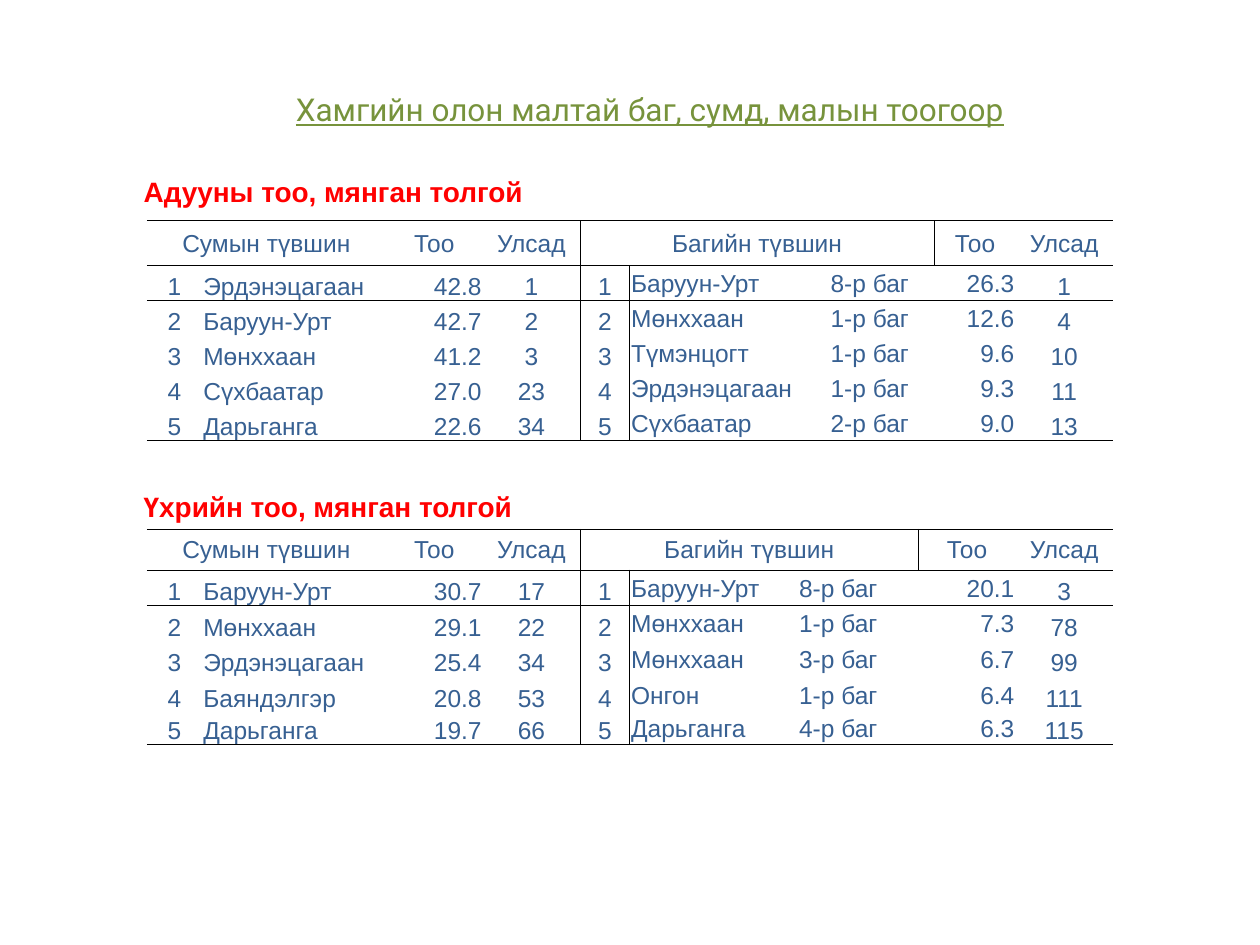
from lxml.etree import SubElement
from pptx import Presentation
from pptx.dml.color import RGBColor
from pptx.enum.text import MSO_ANCHOR, MSO_AUTO_SIZE, PP_ALIGN
from pptx.oxml.ns import qn
from pptx.util import Inches, Pt

UNIT = Inches(1 / 12)  # the slide is a grid of 120 columns by 90 rows
NO_STYLE_NO_GRID = "{2D5ABB26-0587-4C30-8999-92F81FD0307C}"
LEFT, CENTER, RIGHT = PP_ALIGN.LEFT, PP_ALIGN.CENTER, PP_ALIGN.RIGHT
MIDDLE, BOTTOM = MSO_ANCHOR.MIDDLE, MSO_ANCHOR.BOTTOM

HEADERS = {0: "Сумын түвшин", 2: "Тоо", 3: "Улсад", 4: "Багийн түвшин", 7: "Тоо", 8: "Улсад"}
HEADER_SPANS = {0: 1, 4: 6}  # first column: last column
COLUMN_ALIGNMENTS = [CENTER, LEFT, RIGHT, CENTER, CENTER, LEFT, LEFT, RIGHT, CENTER]
COLUMN_ANCHORS = [BOTTOM] * 5 + [MIDDLE] * 3 + [BOTTOM]
DISTRICT_WIDTHS = [5.25, 17.5, 9.25, 9.25, 4.75]
FIRST_BAG_COLUMN = len(DISTRICT_WIDTHS) - 1

# district, count, national rank | district, bag, count, national rank
HORSES = [
    ("Эрдэнэцагаан", "42.8", "1", "Баруун-Урт", "8-р баг", "26.3", "1"),
    ("Баруун-Урт", "42.7", "2", "Мөнххаан", "1-р баг", "12.6", "4"),
    ("Мөнххаан", "41.2", "3", "Түмэнцогт", "1-р баг", "9.6", "10"),
    ("Сүхбаатар", "27.0", "23", "Эрдэнэцагаан", "1-р баг", "9.3", "11"),
    ("Дарьганга", "22.6", "34", "Сүхбаатар", "2-р баг", "9.0", "13"),
]
CATTLE = [
    ("Баруун-Урт", "30.7", "17", "Баруун-Урт", "8-р баг", "20.1", "3"),
    ("Мөнххаан", "29.1", "22", "Мөнххаан", "1-р баг", "7.3", "78"),
    ("Эрдэнэцагаан", "25.4", "34", "Мөнххаан", "3-р баг", "6.7", "99"),
    ("Баяндэлгэр", "20.8", "53", "Онгон", "1-р баг", "6.4", "111"),
    ("Дарьганга", "19.7", "66", "Дарьганга", "4-р баг", "6.3", "115"),
]


def color(hex_string):
    return RGBColor.from_string(hex_string)


def units(count):
    return round(count * UNIT)


def write(frame, text, *, size, fill, font="Arial", bold=False, underline=False, align=LEFT):
    paragraph = frame.paragraphs[0]
    paragraph.alignment = align
    run = paragraph.add_run()
    run.text = text
    run.font.name = font
    run.font.size = Pt(size)
    run.font.bold = bold
    run.font.underline = underline
    run.font.color.rgb = color(fill)


def draw_borders(cell, sides, line="000000", width=0.5):
    """Rule the named sides (any of L, R, T, B); they must precede the cell's fill."""
    properties = cell._tc.get_or_add_tcPr()
    for side in "LRTB":
        if side in sides:
            border = SubElement(properties, qn(f"a:ln{side}"), w=str(Pt(width)))
            solid = SubElement(border, qn("a:solidFill"))
            SubElement(solid, qn("a:srgbClr"), val=line)


class RankingSlide:
    title_color = "77933C"
    heading_color = "FF0000"
    table_color = "376092"

    def __init__(self, presentation):
        self.slide = presentation.slides.add_slide(presentation.slide_layouts[6])

    def text_box(self, text, left, top, height, **text_format):
        box = self.slide.shapes.add_textbox(units(left), units(top), units(70), units(height))
        box.text_frame.word_wrap = True
        box.text_frame.auto_size = MSO_AUTO_SIZE.SHAPE_TO_FIT_TEXT
        write(box.text_frame, text, **text_format)

    def title(self, text):
        self.text_box(text, 27, 8, 4.8, size=18, fill=self.title_color,
                      font="Roboto", underline=True)

    def heading(self, text, top):
        self.text_box(text, 12.5, top, 4.4, size=16, fill=self.heading_color, bold=True)

    def cell(self, cell, text, align, anchor, sides):
        cell.margin_left = cell.margin_right = cell.margin_top = Inches(0.01)
        cell.margin_bottom = 0
        cell.vertical_anchor = anchor
        write(cell.text_frame, text, size=14, fill=self.table_color, align=align)
        draw_borders(cell, sides)
        cell.fill.background()

    def ranking_table(self, records, top, bag_widths, heights):
        widths = DISTRICT_WIDTHS + bag_widths
        frame = self.slide.shapes.add_table(
            len(heights), len(widths), units(14), units(top),
            units(sum(widths)), units(sum(heights)))
        table = frame.table
        table.first_row = table.horz_banding = False
        table._tbl.tblPr.find(qn("a:tableStyleId")).text = NO_STYLE_NO_GRID
        for column, width in zip(table.columns, widths):
            column.width = units(width)
        for row, height in zip(table.rows, heights):
            row.height = units(height)
        for first, last in HEADER_SPANS.items():
            table.cell(0, first).merge(table.cell(0, last))

        rows = [[HEADERS.get(column, "") for column in range(len(widths))]]
        for rank, record in enumerate(records, start=1):
            rows.append([str(rank), *record[:3], str(rank), *record[3:]])
        for row, values in enumerate(rows):
            horizontal = "TB" if row == 0 else "T" if row == 1 else ""
            if row == len(records):
                horizontal += "B"
            for column, value in enumerate(values):
                vertical = {FIRST_BAG_COLUMN - 1: "R", FIRST_BAG_COLUMN: "L"}.get(column, "")
                align, anchor = COLUMN_ALIGNMENTS[column], COLUMN_ANCHORS[column]
                if row == 0:
                    align, anchor = CENTER, MIDDLE
                self.cell(table.cell(row, column), value, align, anchor, horizontal + vertical)


def main():
    presentation = Presentation()
    presentation.slide_width = units(120)
    presentation.slide_height = units(90)
    slide = RankingSlide(presentation)
    slide.title("Хамгийн олон малтай баг, сумд, малын тоогоор")
    slide.heading("Адууны тоо, мянган толгой", 16)
    slide.ranking_table(HORSES, 21, [19, 10, 7.75, 9.25], [4.3] + [3.34] * 5)
    slide.heading("Үхрийн тоо, мянган толгой", 46)
    slide.ranking_table(CATTLE, 50.4, [16, 11.5, 9.25, 9.25], [3.9] + [3.4] * 4 + [3])
    presentation.save("out.pptx")


if __name__ == "__main__":
    main()
